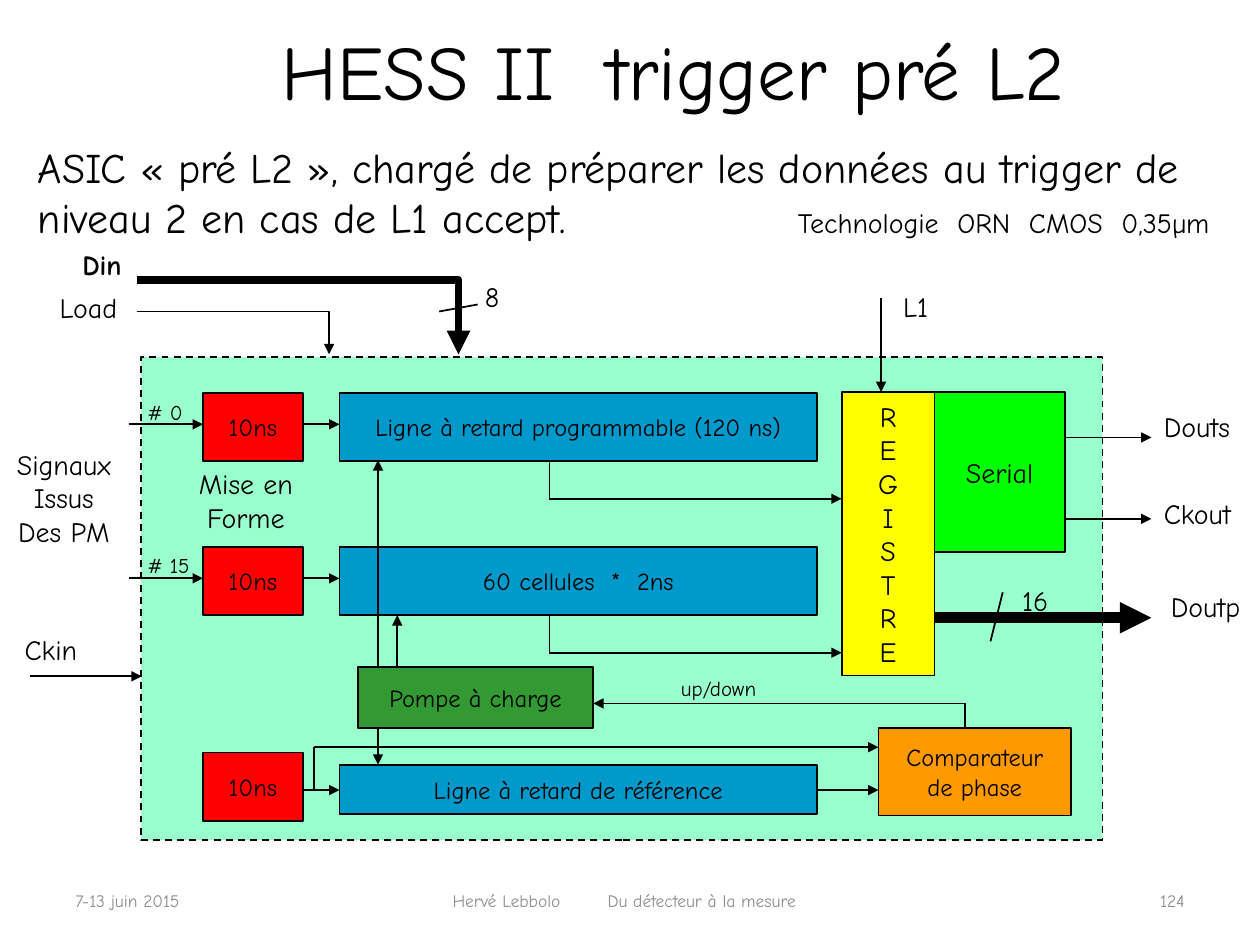
from lxml import etree
from pptx import Presentation
from pptx.dml.color import RGBColor
from pptx.enum.dml import MSO_LINE
from pptx.enum.shapes import MSO_CONNECTOR, MSO_SHAPE
from pptx.enum.text import MSO_ANCHOR, MSO_AUTO_SIZE, PP_ALIGN
from pptx.oxml.ns import qn
from pptx.util import Pt

LEFT, MID, RIGHT = PP_ALIGN.LEFT, PP_ALIGN.CENTER, PP_ALIGN.RIGHT
TOP, CENTRE = MSO_ANCHOR.TOP, MSO_ANCHOR.MIDDLE
RECT, LINE, DASH = MSO_SHAPE.RECTANGLE, MSO_CONNECTOR.STRAIGHT, MSO_LINE.DASH
FONT = "Comic Neue"
INK = {
    "black": "000000", "grey": "8C8C8C", "mint": "99FFCC", "red": "FF0000",
    "blue": "0099CC", "yellow": "FFFF00", "lime": "00FF00",
    "green": "339933", "orange": "FF9900",
}


def tint(name):
    return RGBColor.from_string(INK[name])


def write(frame, text, size=16, color="black", bold=False, align=LEFT,
          anchor=TOP, wrap=False):
    """Fill a text frame, one paragraph for each line of text."""
    frame.text = text
    frame.auto_size = MSO_AUTO_SIZE.NONE
    frame.word_wrap, frame.vertical_anchor = wrap, anchor
    for par in frame.paragraphs:
        par.alignment = align
        par.space_before = Pt(0)
        for run in par.runs:
            font = run.font
            font.name, font.size, font.bold = FONT, Pt(size), bold
            font.color.rgb = tint(color)


def place(shape, x, y, w, h):
    shape.left, shape.top, shape.width, shape.height = map(Pt, (x, y, w, h))


def label(slide, text, x, y, w, size=16, **form):
    high = 7.2 + 1.2 * size * (text.count("\n") + 1)
    box = slide.shapes.add_textbox(Pt(x), Pt(y), Pt(w), Pt(high))
    write(box.text_frame, text, size, **form)
    return box.text_frame


def block(slide, text, x, y, w, h, fill, size=14):
    shape = slide.shapes.add_shape(RECT, Pt(x), Pt(y), Pt(w), Pt(h))
    shape.shadow.inherit = False
    shape.fill.solid()
    shape.fill.fore_color.rgb = tint(fill)
    pen(shape)
    if text:
        write(shape.text_frame, text, size, align=MID, anchor=CENTRE)
    return shape


def pen(shape, width=1, head=False):
    shape.line.color.rgb = tint("black")
    shape.line.width = Pt(width)
    if head:
        etree.SubElement(shape.line._get_or_add_ln(), qn("a:tailEnd"),
                         type="triangle")


def wire(slide, *spots, width=1, head=True):
    """Join the spots with straight connectors; the last one has the arrow."""
    last = len(spots) - 2
    for i, (start, end) in enumerate(zip(spots, spots[1:])):
        line = slide.shapes.add_connector(LINE, *map(Pt, start + end))
        pen(line, width, head and i == last)
        etree.SubElement(line._element.spPr, qn("a:effectLst"))


def bend(slide, x, y, w, h, width):
    """Draw one line that goes right, then down to an arrowhead."""
    form = slide.shapes.build_freeform(Pt(x), Pt(y))
    form.add_line_segments([(Pt(x + w), Pt(y)), (Pt(x + w), Pt(y + h))],
                           close=False)
    shape = form.convert_to_shape()
    shape.shadow.inherit = False
    shape.fill.background()
    pen(shape, width, True)


def header(slide, x, y, w):
    title, body = slide.placeholders
    place(title, x + 39, y, w - 38, 64)
    write(title.text_frame, "HESS II  trigger pré L2", 44, align=MID,
          anchor=CENTRE, wrap=True)
    place(body, x, y + 69, w, 66)
    write(body.text_frame, "ASIC « pré L2 », chargé de préparer les données "
          "au trigger de niveau 2 en cas de L1 accept.", 24, wrap=True)
    props = body.text_frame.paragraphs[0]._p.get_or_add_pPr()
    props.set("marL", "0")
    props.set("indent", "0")
    etree.SubElement(props, qn("a:buNone"))
    label(slide, "Technologie  ORN  CMOS  0,35µm", x + 434.4, y + 106, 251)


def footer(slide, x, y, w):
    look = dict(size=10, color="grey", anchor=CENTRE)
    label(slide, "7-13 juin 2015", x, y, 109, **look)
    note = label(slide, "Hervé Lebbolo\tDu détecteur à la mesure",
                 x + 215.5, y, 240, **look)
    props = note.paragraphs[0]._p.get_or_add_pPr()
    stops = etree.SubElement(props, qn("a:tabLst"))
    etree.SubElement(stops, qn("a:tab"), pos=str(Pt(88.6)), algn="l")
    label(slide, "124", x + w - 86, y, 86, align=RIGHT, **look)


def channel(slide, x, y, tag, text):
    """Draw a signal input, its shaper, its delay line and the way out."""
    mid = y + 18
    block(slide, "10ns", x + 42.5, y, 57, 39, "red")
    block(slide, text, x + 120.5, y, 273, 39, "blue")
    wire(slide, (x, mid), (x + 42.5, mid))
    wire(slide, (x + 99.5, mid), (x + 120.5, mid))
    label(slide, tag, x + 3.6, y, 40, 12)
    wire(slide, (x + 240.5, y + 39), (x + 240.5, y + 60.5),
         (x + 407.5, y + 60.5))


def loop(slide, x, y):
    """Draw the reference line, phase comparator and charge pump."""
    mid = y + 70.5
    block(slide, "Ligne à retard de référence", x + 78, y + 56, 273, 28, "blue")
    block(slide, "Comparateur\nde phase", x + 386, y + 35, 110, 50, "orange")
    block(slide, "10ns", x, y + 49, 57, 39, "red")
    block(slide, "Pompe à charge", x + 88.5, y, 134.5, 35, "green")
    wire(slide, (x + 351, mid), (x + 386, mid))
    wire(slide, (x + 57, mid), (x + 78, mid))
    wire(slide, (x + 63.5, mid), (x + 63.5, y + 46), (x + 386, y + 46))
    wire(slide, (x + 435.5, y + 35), (x + 435.5, y + 21), (x + 223, y + 21))
    label(slide, "up/down", x + 266, y + 1.5, 61, 12)
    wire(slide, (x + 111, y), (x + 111, y - 29.5))
    wire(slide, (x + 100, y), (x + 100, y - 118))
    wire(slide, (x + 100, y + 35), (x + 100, y + 56))


def outputs(slide, x, y):
    """Draw the register, the serial stage and the lines they drive."""
    edge, end = x + 53, x + 177
    block(slide, "\n".join("REGISTRE"), x, y, 53, 162, "yellow", 16)
    block(slide, "Serial", edge, y, 74.5, 91.5, "lime", 16)
    for text, drop, rise in (("Douts", 26, 19.5), ("Ckout", 72.5, 16.5)):
        wire(slide, (x + 127.5, y + drop), (end, y + drop))
        label(slide, text, end, y + drop - rise, 58)
    wire(slide, (edge, y + 129), (end, y + 129), width=6)
    wire(slide, (x + 92, y + 114.5), (x + 85, y + 142.5), head=False)
    label(slide, "16", x + 96, y + 106, 32)
    label(slide, "Doutp", x + 181, y + 109.5, 58)
    wire(slide, (x + 22.5, y - 53.5), (x + 22.5, y))
    label(slide, "L1", x + 28, y - 62, 31)


def inputs(slide, x, y):
    """Draw the control and clock lines on the left of the chip."""
    label(slide, "Din", x + 40, y, 39, bold=True)
    label(slide, "Load", x + 27, y + 24.5, 50)
    label(slide, "8", x + 270, y + 18, 24)
    bend(slide, x + 78, y + 22, 184, 42.5, 4.5)
    bend(slide, x + 78, y + 40, 110, 24.5, 1)
    wire(slide, (x + 251, y + 40), (x + 273, y + 36), head=False)
    label(slide, "Signaux\nIssus\nDes PM", x, y + 114, 73, align=MID)
    label(slide, "Ckin", x + 7, y + 220, 46)
    wire(slide, (x + 17, y + 248.5), (x + 81, y + 248.5))


def main():
    deck = Presentation()
    deck.slide_width, deck.slide_height = Pt(720), Pt(540)
    slide = deck.slides.add_slide(deck.slide_layouts[1])
    header(slide, 14.4, 8, 701)
    chip = block(slide, "", 80.5, 204, 549.5, 276, "mint")
    chip.line.dash_style = DASH
    channel(slide, 73.5, 224.5, "# 0", "Ligne à retard programmable (120 ns)")
    channel(slide, 73.5, 312.5, "# 15", "60 cellules  *  2ns")
    label(slide, "Mise en\nForme", 103.5, 263, 74, align=MID)
    outputs(slide, 481, 224)
    loop(slide, 116, 381)
    inputs(slide, 0, 138)
    footer(slide, 36, 505, 648)
    deck.save("out.pptx")


if __name__ == "__main__":
    main()
